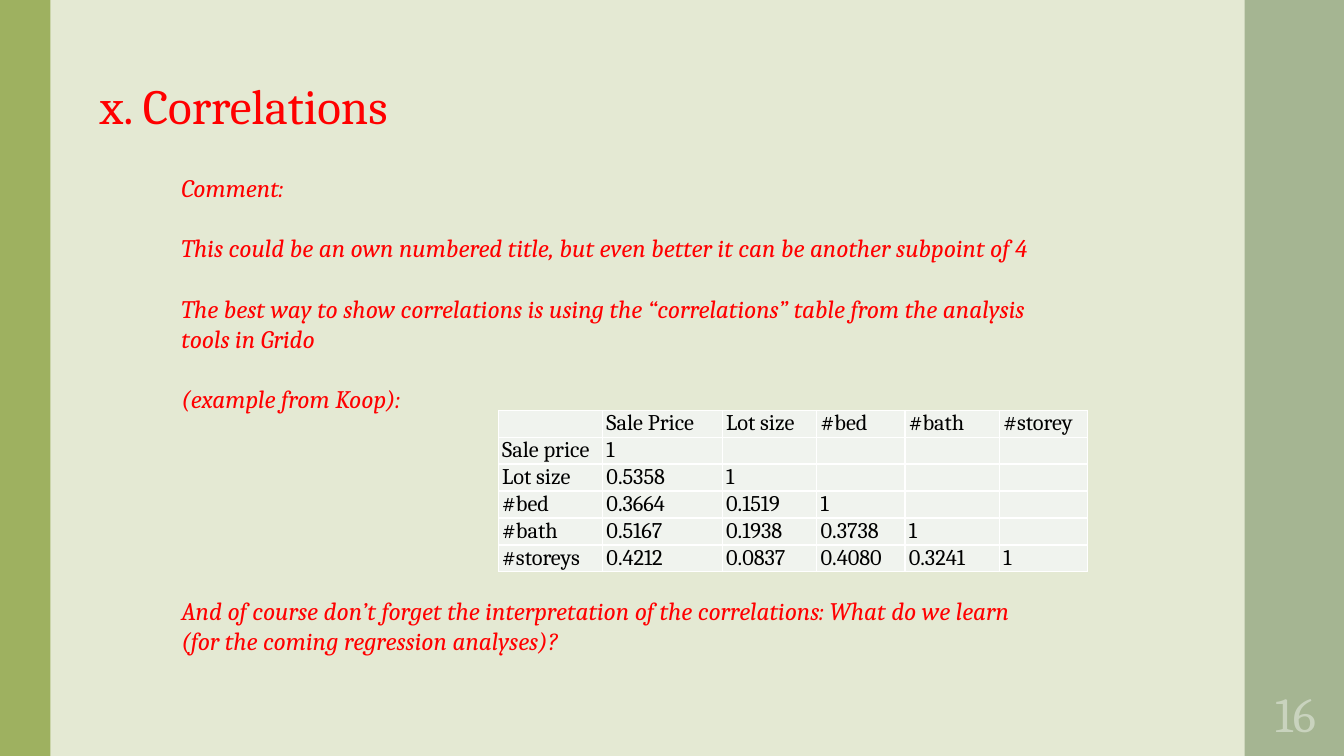
from lxml import etree
from pptx import Presentation
from pptx.dml.color import RGBColor
from pptx.enum.shapes import MSO_SHAPE
from pptx.enum.text import MSO_ANCHOR, MSO_AUTO_SIZE, PP_ALIGN
from pptx.oxml.ns import qn
from pptx.util import Pt

RECTANGLE = MSO_SHAPE.RECTANGLE
TOP = MSO_ANCHOR.TOP
NO_AUTOFIT = MSO_AUTO_SIZE.NONE
LEFT, RIGHT = PP_ALIGN.LEFT, PP_ALIGN.RIGHT

FONT = "Cambria"
BACKGROUND = RGBColor(0xE4, 0xE9, 0xD3)
GREEN = RGBColor(0x9E, 0xB1, 0x60)
SAGE = RGBColor(0xA5, 0xB5, 0x92)
PALE_SAGE = RGBColor(0xC9, 0xD3, 0xBE)
RED = RGBColor(0xFF, 0x00, 0x00)
BLACK = RGBColor(0x00, 0x00, 0x00)
CELL_FILL = RGBColor(0xF0, 0xF3, 0xEE)
BORDER = RGBColor(0xFF, 0xFF, 0xFF)

SLIDE_WIDTH, SLIDE_HEIGHT = 960, 540
BODY_LINE = 21.5
TABLE_GAP = 6 * BODY_LINE + 0.7
ROW_HEIGHT = 19.25

COMMENTS = [
    ("Comment:", 0),
    ("This could be an own numbered title, but even better it can be "
     "another subpoint of 4", BODY_LINE),
    ("The best way to show correlations is using the “correlations” table "
     "from the analysis tools in Grido", BODY_LINE),
    ("(example from Koop):", BODY_LINE),
    ("And of course don’t forget the interpretation of the correlations: "
     "What do we learn (for the coming regression analyses)?", TABLE_GAP),
]
COLUMN_WIDTHS = [74.5, 85.5, 67.5, 63, 67.5, 63]
CORRELATIONS = [
    ["", "Sale Price", "Lot size", "#bed", "#bath", "#storey"],
    ["Sale price", "1"],
    ["Lot size", "0.5358", "1"],
    ["#bed", "0.3664", "0.1519", "1"],
    ["#bath", "0.5167", "0.1938", "0.3738", "1"],
    ["#storeys", "0.4212", "0.0837", "0.4080", "0.3241", "1"],
]


def format_paragraph(paragraph, size, color, italic=False, align=LEFT):
    paragraph.alignment = align
    font = paragraph.font
    font.name, font.size, font.italic = FONT, Pt(size), italic
    font.color.rgb = color


def add_side_band(slide, left, width, color):
    band = slide.shapes.add_shape(
        RECTANGLE, Pt(left), Pt(0), Pt(width), Pt(SLIDE_HEIGHT))
    band.shadow.inherit = False
    band.fill.solid()
    band.fill.fore_color.rgb = color
    band.line.fill.background()


def set_title(slide, text):
    title = slide.shapes.title
    title.left, title.top = Pt(64), Pt(50.5)
    title.width, title.height = Pt(824), Pt(109)
    frame = title.text_frame
    frame.text = text
    frame.vertical_anchor = TOP
    frame.auto_size = NO_AUTOFIT
    format_paragraph(frame.paragraphs[0], 35.1, RED)


def add_text_box(slide, left, top, width, height):
    frame = slide.shapes.add_textbox(
        Pt(left), Pt(top), Pt(width), Pt(height)).text_frame
    frame.word_wrap = True
    return frame


def add_comments(slide):
    frame = add_text_box(slide, 122.5, 119.5, 628, 378)
    for index, (text, gap) in enumerate(COMMENTS):
        paragraph = frame.add_paragraph() if index else frame.paragraphs[0]
        paragraph.text = text
        paragraph.space_before = Pt(gap)
        format_paragraph(paragraph, 18, RED, italic=True)


def add_page_number(slide, number):
    frame = add_text_box(slide, 889, 485, 58, 50)
    frame.text = number
    format_paragraph(frame.paragraphs[0], 35, PALE_SAGE, align=RIGHT)


def set_borders(cell):
    """Draw a thin line on all four sides, placed ahead of the cell fill."""
    properties = cell._tc.get_or_add_tcPr()
    for position, side in enumerate(("lnL", "lnR", "lnT", "lnB")):
        line = etree.Element(qn(f"a:{side}"), w=str(Pt(1)))
        fill = etree.SubElement(line, qn("a:solidFill"))
        etree.SubElement(fill, qn("a:srgbClr"), val=str(BORDER))
        properties.insert(position, line)


def format_cell(cell, text):
    cell.margin_left = cell.margin_right = Pt(2.7)
    cell.margin_top = cell.margin_bottom = Pt(0)
    cell.fill.solid()
    cell.fill.fore_color.rgb = CELL_FILL
    cell.text = text
    paragraph = cell.text_frame.paragraphs[0]
    format_paragraph(paragraph, 16, BLACK)
    if not text:
        etree.SubElement(paragraph._p, qn("a:endParaRPr"), sz="1600")
    set_borders(cell)


def add_correlation_table(slide):
    rows, columns = len(CORRELATIONS), len(COLUMN_WIDTHS)
    table = slide.shapes.add_table(
        rows, columns, Pt(356), Pt(293), Pt(sum(COLUMN_WIDTHS)),
        Pt(rows * ROW_HEIGHT)).table
    table.first_row = table.horz_banding = False
    for column, width in zip(table.columns, COLUMN_WIDTHS):
        column.width = Pt(width)
    for row, values in zip(table.rows, CORRELATIONS):
        row.height = Pt(ROW_HEIGHT)
        padded = values + [""] * (columns - len(values))
        for cell, text in zip(row.cells, padded):
            format_cell(cell, text)


def main():
    presentation = Presentation()
    presentation.slide_width = Pt(SLIDE_WIDTH)
    presentation.slide_height = Pt(SLIDE_HEIGHT)
    slide = presentation.slides.add_slide(presentation.slide_layouts[5])
    slide.background.fill.solid()
    slide.background.fill.fore_color.rgb = BACKGROUND

    add_side_band(slide, 889, SLIDE_WIDTH - 889, SAGE)
    add_side_band(slide, 0, 36, GREEN)
    set_title(slide, "x. Correlations")
    add_comments(slide)
    add_correlation_table(slide)
    add_page_number(slide, "16")
    presentation.save("out.pptx")


if __name__ == "__main__":
    main()
